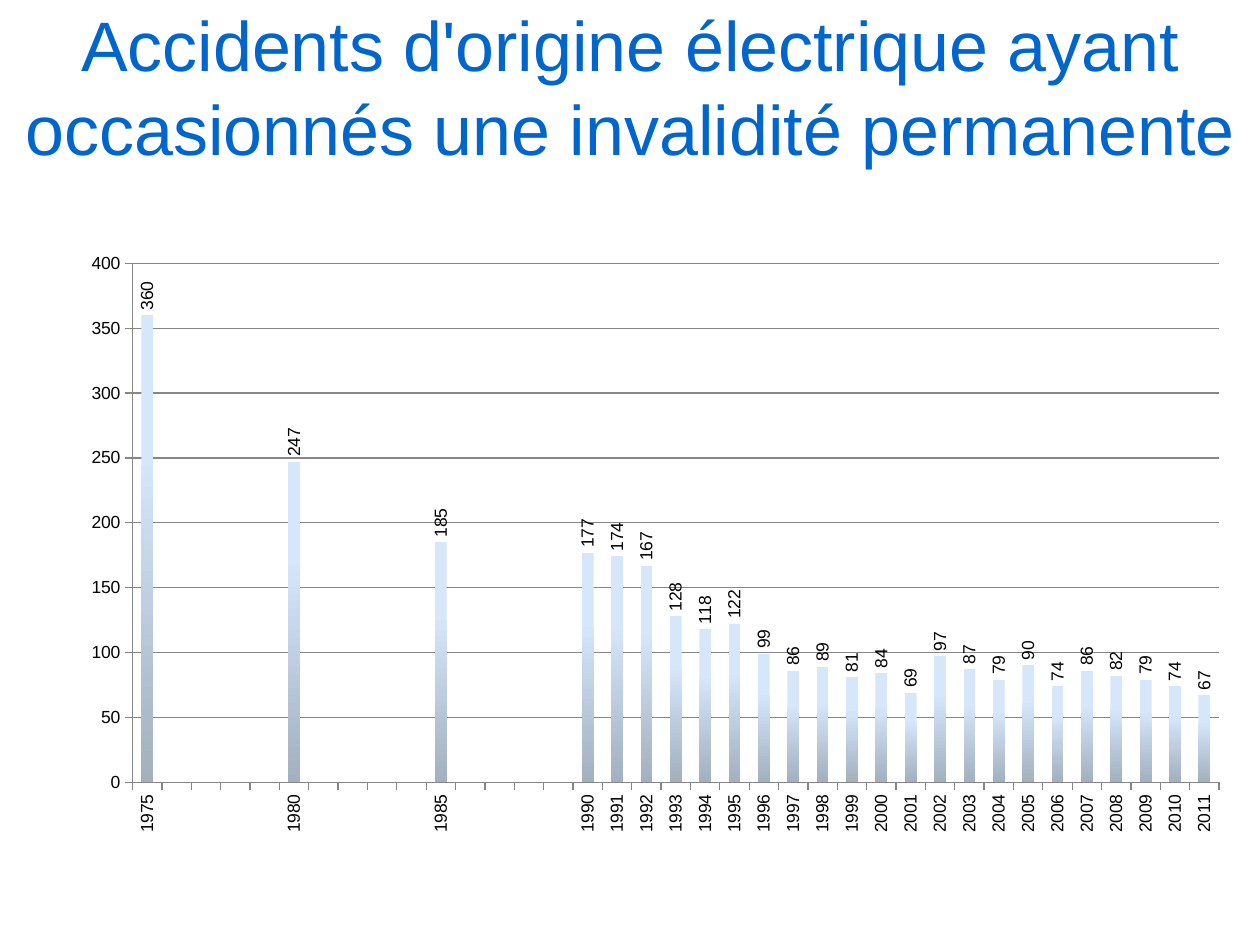
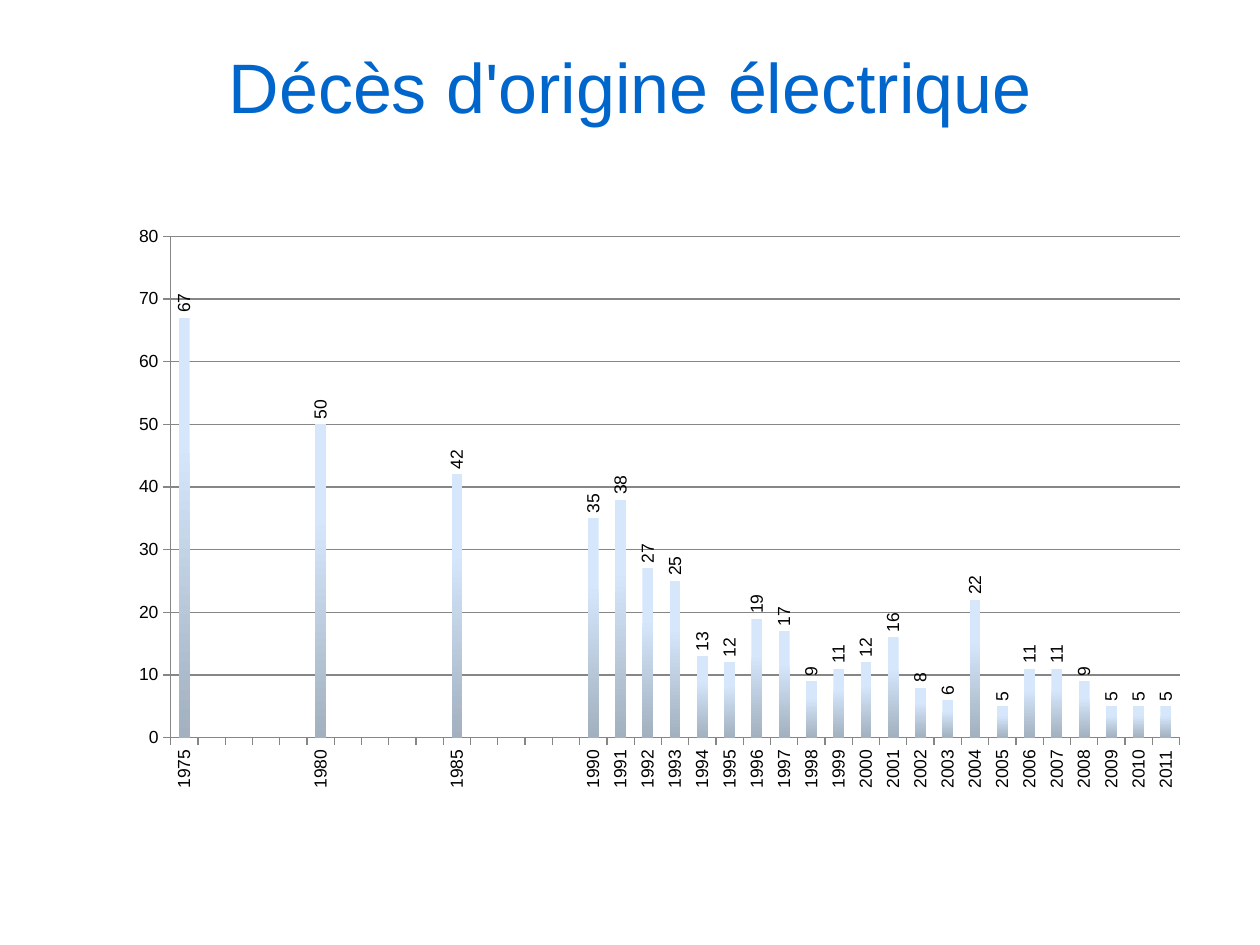
from lxml import etree
from pptx import Presentation
from pptx.chart.data import CategoryChartData
from pptx.dml.color import RGBColor
from pptx.enum.chart import XL_CHART_TYPE as ChartType
from pptx.enum.chart import XL_LABEL_POSITION as LabelPos
from pptx.enum.chart import XL_TICK_MARK as Tick
from pptx.enum.text import MSO_ANCHOR as Anchor
from pptx.enum.text import PP_ALIGN as Align
from pptx.oxml.ns import qn
from pptx.util import Cm, Pt

COLORS = {"title": "0066CC", "text": "000000", "line": "868686",
          "bar_top": "D6E7FC", "bar_bottom": "A2B0BF"}
FONT = "Arial"
YEARS = [1975, 1980, 1985, *range(1990, 2012)]

SLIDES = [
    dict(title="Accidents d'origine électrique ayant occasionnés une invalidité permanente",
         title_box=(0, 0.2, 25.4, 2.92),
         chart_box=(0.03, 4.52, 25.15, 13.16),
         plot_area=(0.105, 0.06, 0.871, 0.795),
         values=[360, 247, 185, 177, 174, 167, 128, 118, 122, 99, 86, 89, 81, 84,
                 69, 97, 87, 79, 90, 74, 86, 82, 79, 74, 67],
         top=400, step=50),
    dict(title="Décès d'origine électrique",
         title_box=(1.27, 0.2, 22.86, 2.92),
         chart_box=(1.3, 3.94, 23.01, 14),
         plot_area=(0.093, 0.059, 0.884, 0.722),
         values=[67, 50, 42, 35, 38, 27, 25, 13, 12, 19, 17, 9, 11, 12,
                 16, 8, 6, 22, 5, 11, 11, 9, 5, 5, 5],
         top=80, step=10),
]


def rgb(name):
    return RGBColor.from_string(COLORS[name])


def set_font(font, size, color):
    font.name, font.size = FONT, Pt(size)
    font.color.rgb = rgb(color)


def add_title(s, text, box):
    tf = s.shapes.add_textbox(*map(Cm, box)).text_frame
    tf.word_wrap = True
    tf.vertical_anchor = Anchor.MIDDLE
    tf.margin_top = Cm(0.24)
    tf.text = text
    p = tf.paragraphs[0]
    p.alignment = Align.CENTER
    p.line_spacing = Pt(48)
    set_font(p.runs[0].font, 40, "title")


def place_plot(chart, area):
    """Fix the inner plot area, as fractions of the chart."""
    plot_area = chart.element.find(".//" + qn("c:plotArea"))
    for old in plot_area.findall(qn("c:layout")):
        plot_area.remove(old)
    layout = etree.Element(qn("c:layout"))
    manual = etree.SubElement(layout, qn("c:manualLayout"))
    settings = [("layoutTarget", "inner"), ("xMode", "edge"), ("yMode", "edge"),
                *zip("xywh", area)]
    for tag, value in settings:
        etree.SubElement(manual, qn("c:" + tag)).set("val", str(value))
    plot_area.insert(0, layout)


def turn_upright(parent):
    """Rotate the labels of an axis or a series to read upwards."""
    body = parent.find(qn("c:txPr")).find(qn("a:bodyPr"))
    body.set("rot", "-5400000")
    body.set("vert", "horz")


def style_line(line):
    line.color.rgb = rgb("line")
    line.width = Pt(0.75)


def style_axes(chart, top, step):
    for axis in (chart.category_axis, chart.value_axis):
        axis.major_tick_mark = Tick.OUTSIDE
        axis.minor_tick_mark = Tick.NONE
        style_line(axis.format.line)
        set_font(axis.tick_labels.font, 10, "text")
    chart.category_axis.has_major_gridlines = False
    turn_upright(chart.category_axis._element)
    axis = chart.value_axis
    axis.minimum_scale, axis.maximum_scale, axis.major_unit = 0, top, step
    axis.has_major_gridlines = True
    style_line(axis.major_gridlines.format.line)


def style_bars(plot):
    plot.gap_width = 150
    plot.vary_by_categories = False
    fill = plot.series[0].format.fill
    fill.gradient()
    fill.gradient_angle = 270
    stops = zip(fill.gradient_stops, (0.3, 1), ("bar_top", "bar_bottom"))
    for stop, position, color in stops:
        stop.position = position
        stop.color.rgb = rgb(color)
    labels = plot.series[0].data_labels
    labels.show_value = True
    labels.position = LabelPos.OUTSIDE_END
    set_font(labels.font, 10, "text")
    turn_upright(labels._element)


def add_year_chart(s, box, plot_area, values, top, step):
    by_year = dict(zip(YEARS, values))
    span = range(YEARS[0], YEARS[-1] + 1)
    data = CategoryChartData()
    data.categories = [str(year) if year in by_year else "" for year in span]
    data.add_series("Series 1", [by_year.get(year) for year in span])
    chart = s.shapes.add_chart(ChartType.COLUMN_CLUSTERED, *map(Cm, box), data).chart
    chart.has_legend = chart.has_title = False
    set_font(chart.font, 10, "text")
    place_plot(chart, plot_area)
    style_axes(chart, top, step)
    style_bars(chart.plots[0])


def add_chart_slide(prs, title, title_box, chart_box, **chart):
    s = prs.slides.add_slide(prs.slide_layouts[6])
    add_title(s, title, title_box)
    add_year_chart(s, chart_box, **chart)


def main():
    prs = Presentation()
    prs.slide_width, prs.slide_height = Cm(25.4), Cm(19.05)
    for slide in SLIDES:
        add_chart_slide(prs, **slide)
    prs.save("out.pptx")


if __name__ == "__main__":
    main()
